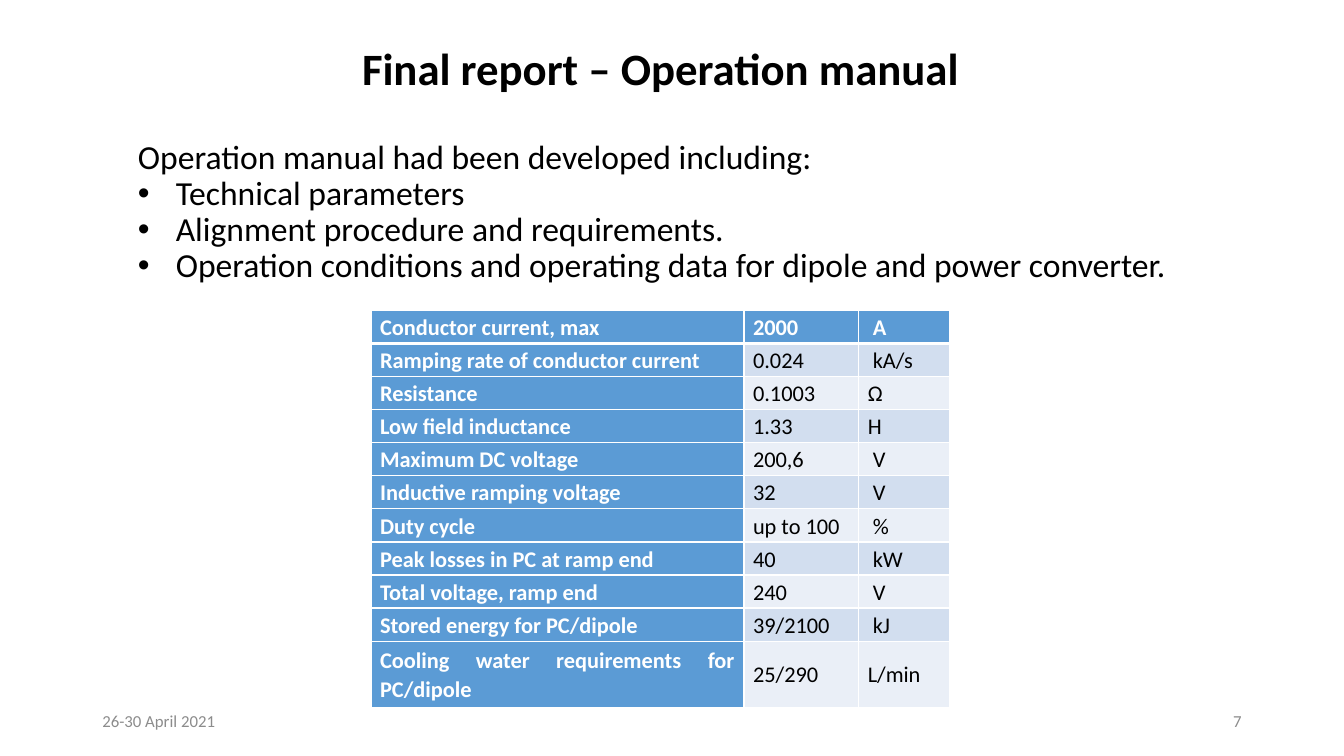
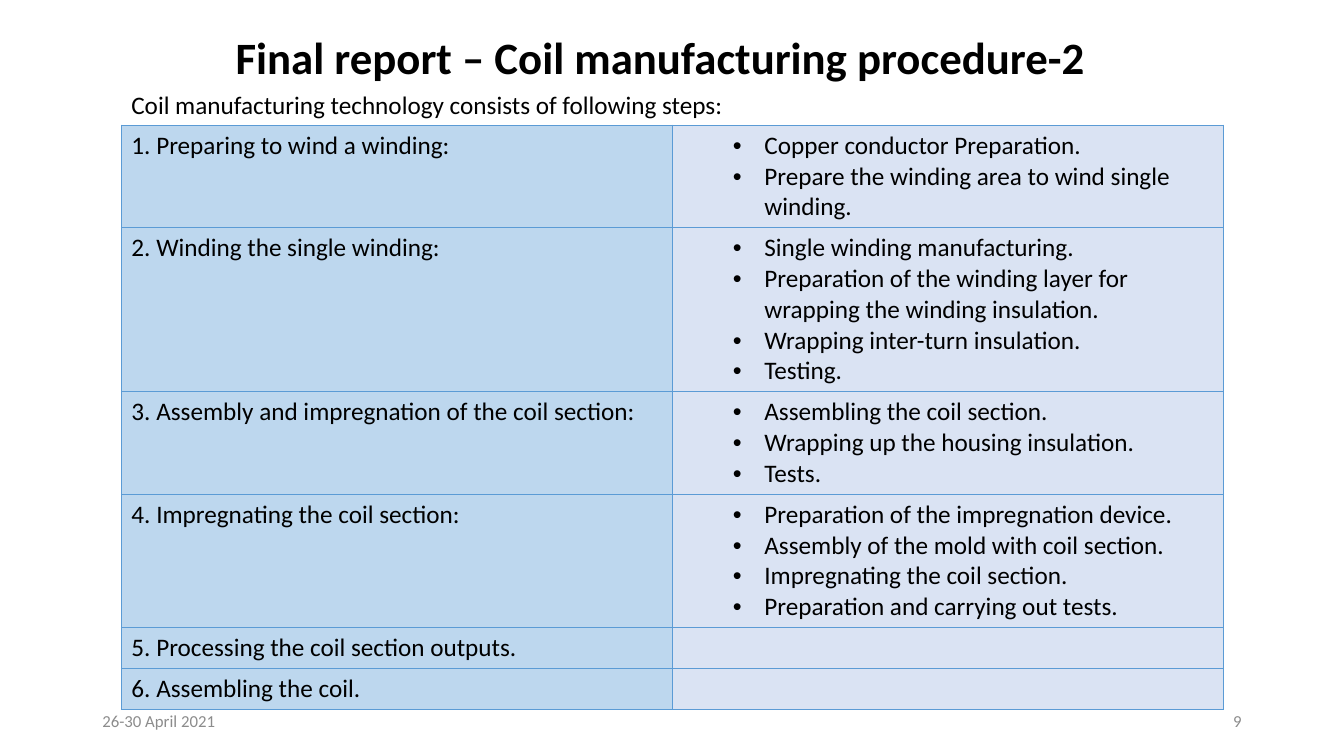
from lxml.etree import SubElement as Sub
from pptx import Presentation
from pptx.dml.color import RGBColor
from pptx.enum.text import MSO_ANCHOR as Anchor, PP_ALIGN as Align
from pptx.oxml.ns import qn
from pptx.util import Pt

BLACK, WHITE, GREY, BLUE = "000000", "FFFFFF", "8C8C8C", "5B9BD5"
BANDS = "D2DEEF", "EAEFF7"
STEP_FILLS = "BDD7EE", "DAE3F3"
LINE = 22

PARAMS = [
    ("Conductor current, max", "2000", " A"),
    ("Ramping rate of conductor current", "0.024", " kA/s"),
    ("Resistance", "0.1003", "Ω"),
    ("Low field inductance", "1.33", "H"),
    ("Maximum DC voltage", "200,6", " V"),
    ("Inductive ramping voltage", "32", " V"),
    ("Duty cycle", "up to 100", " %"),
    ("Peak losses in PC at ramp end", "40", " kW"),
    ("Total voltage, ramp end", "240", " V"),
    ("Stored energy for PC/dipole", "39/2100", " kJ"),
    ("Cooling water requirements for PC/dipole", "25/290", "L/min"),
]

STEPS = [
    ("1. Preparing to wind a winding:", 3, [
        "Copper conductor Preparation.",
        "Prepare the winding area to wind single winding."]),
    ("2. Winding the single winding:", 5, [
        "Single winding manufacturing.",
        "Preparation of the winding layer for wrapping the winding insulation.",
        "Wrapping inter-turn insulation.",
        "Testing."]),
    ("3. Assembly and impregnation of the coil section:", 3, [
        "Assembling the coil section.",
        "Wrapping up the housing insulation.",
        "Tests."]),
    ("4. Impregnating the coil section:", 4, [
        "Preparation of the impregnation device.",
        "Assembly of the mold with coil section.",
        "Impregnating the coil section.",
        "Preparation and carrying out tests."]),
    ("5. Processing the coil section outputs.", 1, []),
    ("6. Assembling the coil.", 1, []),
]


def tint(code):
    return RGBColor.from_string(code)


def write(frame, lines, size=18, color=BLACK, bold=False, align=Align.LEFT,
          space=1.0, left=0, hang=0, plain=0):
    for i, line in enumerate(lines):
        para = frame.add_paragraph() if i else frame.paragraphs[0]
        para.alignment = align
        para.line_spacing = space
        run = para.add_run()
        run.text = line
        font = run.font
        font.name, font.size, font.bold = "Calibri", Pt(size), bold
        font.color.rgb = tint(color)
        if hang and i >= plain:
            props = para._p.get_or_add_pPr()
            props.set("marL", str(Pt(left)))
            props.set("indent", str(-Pt(hang)))
            Sub(props, qn("a:buFont"), typeface="Arial")
            Sub(props, qn("a:buChar"), char="•")


class Deck:
    def __init__(self):
        self.show = Presentation()
        self.show.slide_width, self.show.slide_height = Pt(960), Pt(540)
        self.slide = None

    def page(self, title, top, number):
        self.slide = self.show.slides.add_slide(self.show.slide_layouts[6])
        self.label([title], 91.5, top, 761, 77, size=32, bold=True,
                   align=Align.CENTER, space=0.9)
        self.label(["26-30 April 2021"], 66, 500.4, 216, 28.8, size=12, color=GREY)
        self.label([number], 678, 500.4, 216, 28.8, size=12, color=GREY,
                   align=Align.RIGHT)

    def label(self, lines, x, y, width, height, anchor=Anchor.MIDDLE, wrap=True, **style):
        box = self.slide.shapes.add_textbox(Pt(x), Pt(y), Pt(width), Pt(height))
        frame = box.text_frame
        frame.word_wrap = wrap
        frame.vertical_anchor = anchor
        write(frame, lines, **style)

    def table(self, x, y, widths, heights):
        shape = self.slide.shapes.add_table(
            len(heights), len(widths), Pt(x), Pt(y), Pt(sum(widths)), Pt(sum(heights)))
        grid = shape.table
        grid.first_row = grid.horz_banding = False
        for col, width in zip(grid.columns, widths):
            col.width = Pt(width)
        for row, height in zip(grid.rows, heights):
            row.height = Pt(height)
        return grid

    def cell(self, cell, lines, fill, edge, top=1, base=1, **style):
        props = cell._tc.get_or_add_tcPr()
        for side, weight in zip("LRTB", (1, 1, top, base)):
            line = Sub(props, qn("a:ln" + side), w=str(Pt(weight)))
            Sub(Sub(line, qn("a:solidFill")), qn("a:srgbClr"), val=edge)
        cell.fill.solid()
        cell.fill.fore_color.rgb = tint(fill)
        write(cell.text_frame, lines, **style)


def manual(deck):
    deck.page("Final report – Operation manual", 12.2, "7")
    deck.label(["Operation manual had been developed including:",
                "Technical parameters",
                "Alignment procedure and requirements.",
                "Operation conditions and operating data for dipole and power converter."],
               91.5, 82.8, 801.4, 138.2, size=24, space=0.9, left=27, hang=27, plain=1)
    high = 23.64
    heights = [high] * (len(PARAMS) - 1) + [2 * high]
    grid = deck.table(265, 221.8, [266.4, 82, 64.8], heights)
    for r, row in enumerate(PARAMS):
        for c, text in enumerate(row):
            head = r == 0 or c == 0
            cell = grid.cell(r, c)
            cell.margin_left = cell.margin_right = Pt(6.5)
            cell.margin_top = cell.margin_bottom = 0
            cell.vertical_anchor = Anchor.MIDDLE
            deck.cell(cell, [text], BLUE if head else BANDS[(r + 1) % 2], WHITE,
                      top=3 if r == 1 else 1, base=3 if r == 0 else 1,
                      size=16, color=WHITE if head else BLACK, bold=head,
                      align=Align.JUSTIFY, space=1.07)


def coil(deck):
    deck.page("Final report – Coil manufacturing procedure-2", 4.3, "9")
    deck.label(["Coil manufacturing technology consists of following steps:"],
               86.7, 60.5, 442, 29, anchor=Anchor.TOP, wrap=False)
    heights = [7.2 + LINE * count for _, count, _ in STEPS]
    grid = deck.table(86.7, 89.5, [393.6] * 2, heights)
    for r, (step, _, tasks) in enumerate(STEPS):
        deck.cell(grid.cell(r, 0), [step], STEP_FILLS[0], BLUE)
        deck.cell(grid.cell(r, 1), tasks, STEP_FILLS[1], BLUE, left=58.5, hang=22.5)


def main():
    deck = Deck()
    manual(deck)
    coil(deck)
    deck.show.save("out.pptx")


if __name__ == "__main__":
    main()
